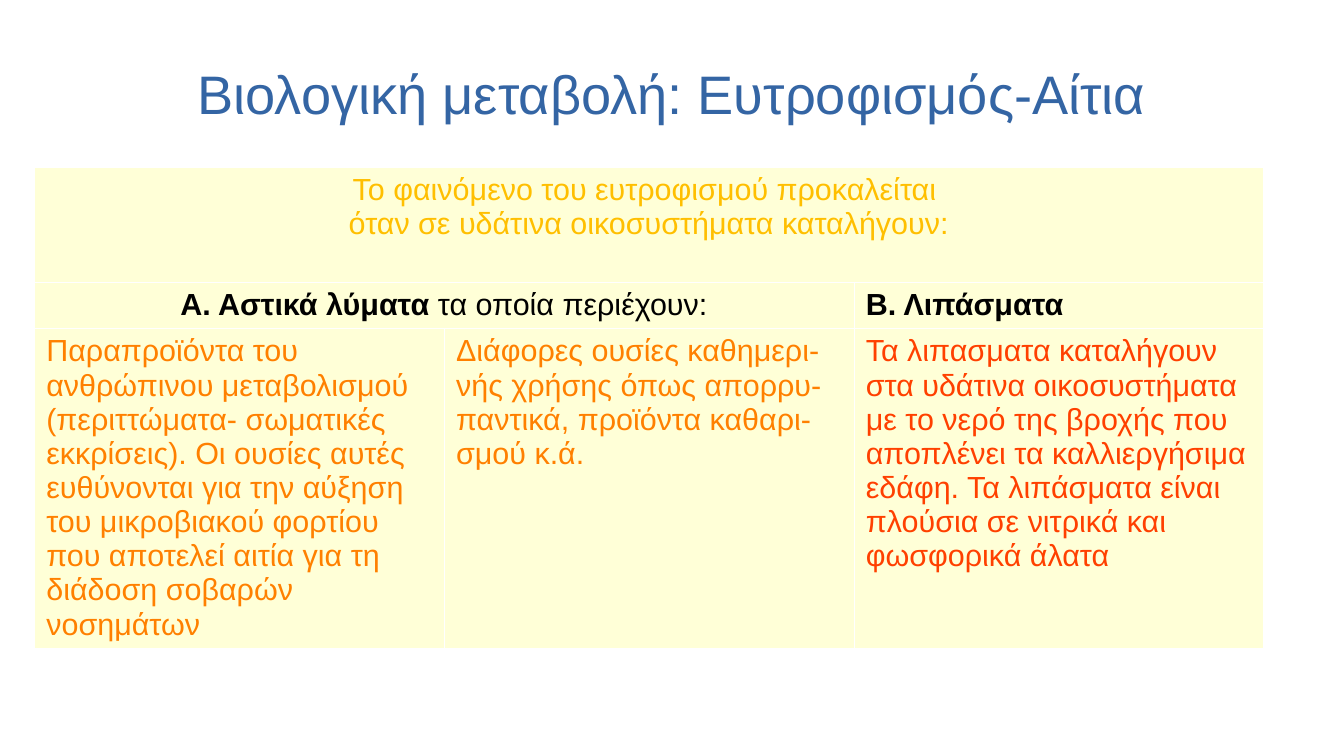
from lxml import etree
from pptx import Presentation
from pptx.dml.color import RGBColor
from pptx.enum.text import MSO_ANCHOR, MSO_AUTO_SIZE, PP_ALIGN
from pptx.oxml.ns import qn
from pptx.util import Pt

LEFT, CENTER = PP_ALIGN.LEFT, PP_ALIGN.CENTER
MIDDLE = MSO_ANCHOR.MIDDLE
NO_AUTOFIT = MSO_AUTO_SIZE.NONE

BLUE, CREAM, WHITE, BLACK = "3465A4", "FFFFD7", "FFFFFF", "000000"
AMBER, ORANGE, RED = "FFBF00", "FF8000", "FF4000"


def color(hex_string):
    return RGBColor.from_string(hex_string)


class SlideBuilder:
    font = "Arial"
    title_size = 32
    body_size = 18
    border_width = 0.06

    def __init__(self, width, height):
        self.deck = Presentation()
        self.deck.slide_width, self.deck.slide_height = Pt(width), Pt(height)
        self.slide = self.deck.slides.add_slide(self.deck.slide_layouts[5])

    def add_text(self, frame, paragraphs, size, ink, align=LEFT):
        """Each paragraph is a list of (text, bold) runs."""
        for index, runs in enumerate(paragraphs):
            paragraph = frame.add_paragraph() if index else frame.paragraphs[0]
            paragraph.alignment = align
            paragraph.space_before = Pt(0)
            for text, bold in runs:
                run = paragraph.add_run()
                run.text = text
                run.font.name, run.font.size = self.font, Pt(size)
                run.font.bold = bold
                run.font.color.rgb = color(ink)

    def title(self, text, left, top, width, height):
        heading = self.slide.shapes.title
        heading.left, heading.top = Pt(left), Pt(top)
        heading.width, heading.height = Pt(width), Pt(height)
        frame = heading.text_frame
        frame.word_wrap, frame.auto_size = True, NO_AUTOFIT
        frame.vertical_anchor = MIDDLE
        frame.margin_left = frame.margin_right = 0
        frame.margin_top = frame.margin_bottom = 0
        self.add_text(frame, [[(text, False)]], self.title_size, BLUE, CENTER)

    def table(self, left, top, column_width, columns, row_heights):
        grid = self.slide.shapes.add_table(
            len(row_heights), columns, Pt(left), Pt(top),
            Pt(column_width * columns), Pt(sum(row_heights))).table
        grid.first_row = grid.horz_banding = False
        for column in grid.columns:
            column.width = Pt(column_width)
        for row, height in zip(grid.rows, row_heights):
            row.height = Pt(height)
        for cell in grid.iter_cells():
            self.borders(cell)
            cell.fill.solid()
            cell.fill.fore_color.rgb = color(CREAM)
        return grid

    def borders(self, cell):
        properties = cell._tc.get_or_add_tcPr()
        for side in ("lnL", "lnR", "lnT", "lnB"):
            line = etree.SubElement(properties, qn(f"a:{side}"),
                                    w=str(int(Pt(self.border_width))))
            fill = etree.SubElement(line, qn("a:solidFill"))
            etree.SubElement(fill, qn("a:srgbClr"), val=WHITE)

    def cell(self, grid, row, column, paragraphs, ink, align=LEFT, span=1):
        target = grid.cell(row, column)
        if span > 1:
            target.merge(grid.cell(row, column + span - 1))
        self.add_text(target.text_frame, paragraphs, self.body_size, ink, align)


def main():
    builder = SlideBuilder(793.44, 446.4)

    # Heading
    builder.title("Βιολογική μεταβολή: Ευτροφισμός-Αίτια", 39.6, 18, 714.24, 74.16)

    # Causes of eutrophication
    causes = builder.table(20.16, 98.64, 241.92, 3, [67.8, 27.36, 188])
    builder.cell(causes, 0, 0, [
        [("Το φαινόμενο του ευτροφισμού προκαλείται ", False)],
        [("όταν σε υδάτινα οικοσυστήματα καταλήγουν:", False)],
    ], AMBER, CENTER, span=3)

    # Sources
    builder.cell(causes, 1, 0, [
        [("Α. Αστικά λύματα ", True), ("τα οποία περιέχουν:", False)],
    ], BLACK, CENTER, span=2)
    builder.cell(causes, 1, 2, [[("Β. Λιπάσματα", True)]], BLACK)

    # Details
    builder.cell(causes, 2, 0, [[(
        "Παραπροϊόντα του ανθρώπινου μεταβολισμού (περιττώματα- σωματικές "
        "εκκρίσεις). Οι ουσίες αυτές ευθύνονται για την αύξηση του μικροβιακού "
        "φορτίου που αποτελεί αιτία για τη διάδοση σοβαρών νοσημάτων", False)]],
        ORANGE)
    builder.cell(causes, 2, 1, [
        [("Διάφορες ουσίες καθημερι-νής χρήσης όπως απορρυ-", False)],
        [("παντικά, προϊόντα καθαρι-σμού κ.ά.", False)],
    ], ORANGE)
    builder.cell(causes, 2, 2, [[(
        "Τα λιπασματα καταλήγουν στα υδάτινα οικοσυστήματα με το νερό της "
        "βροχής που αποπλένει τα καλλιεργήσιμα εδάφη. Τα λιπάσματα είναι "
        "πλούσια σε νιτρικά και φωσφορικά άλατα", False)]], RED)

    builder.deck.save("out.pptx")


if __name__ == "__main__":
    main()
